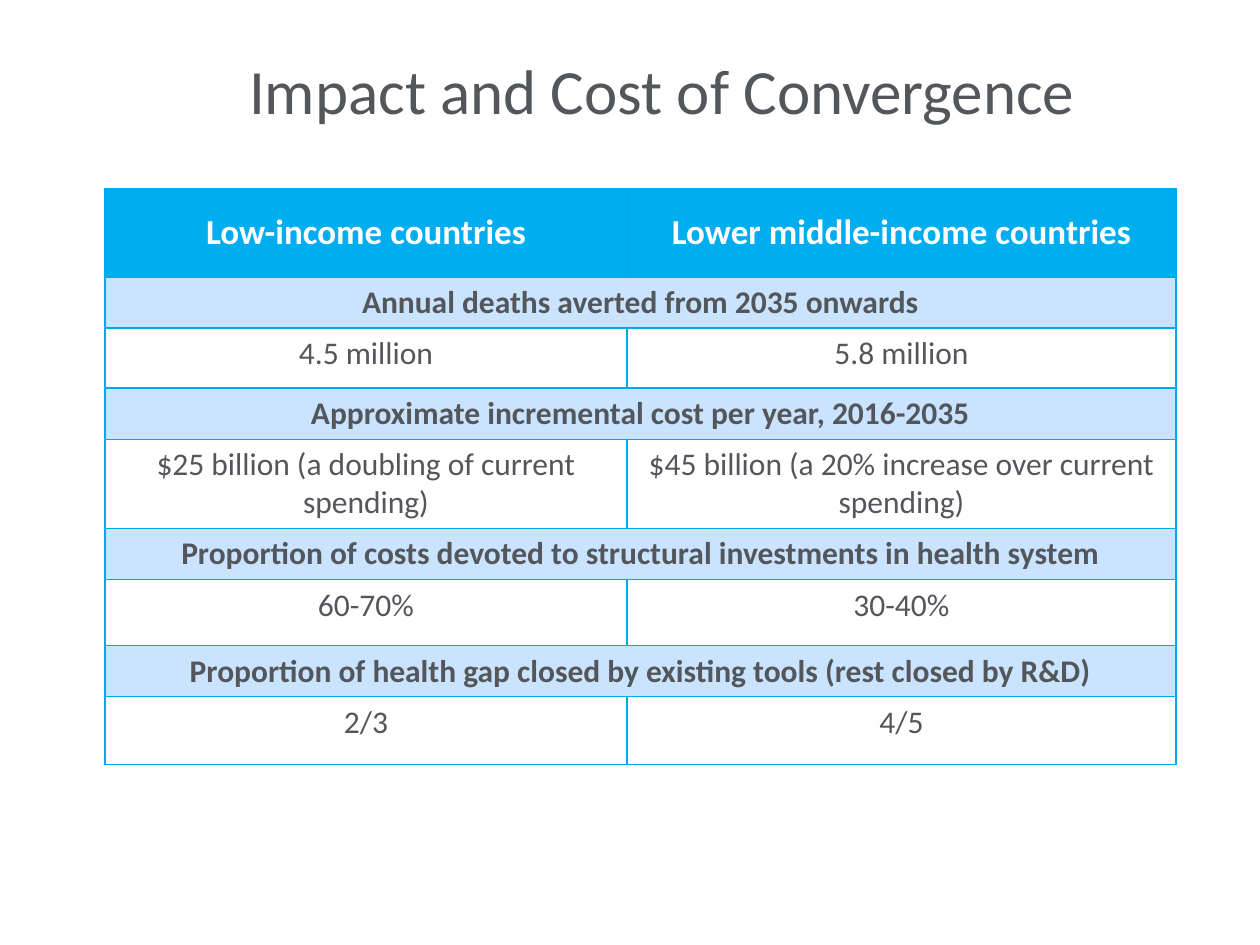
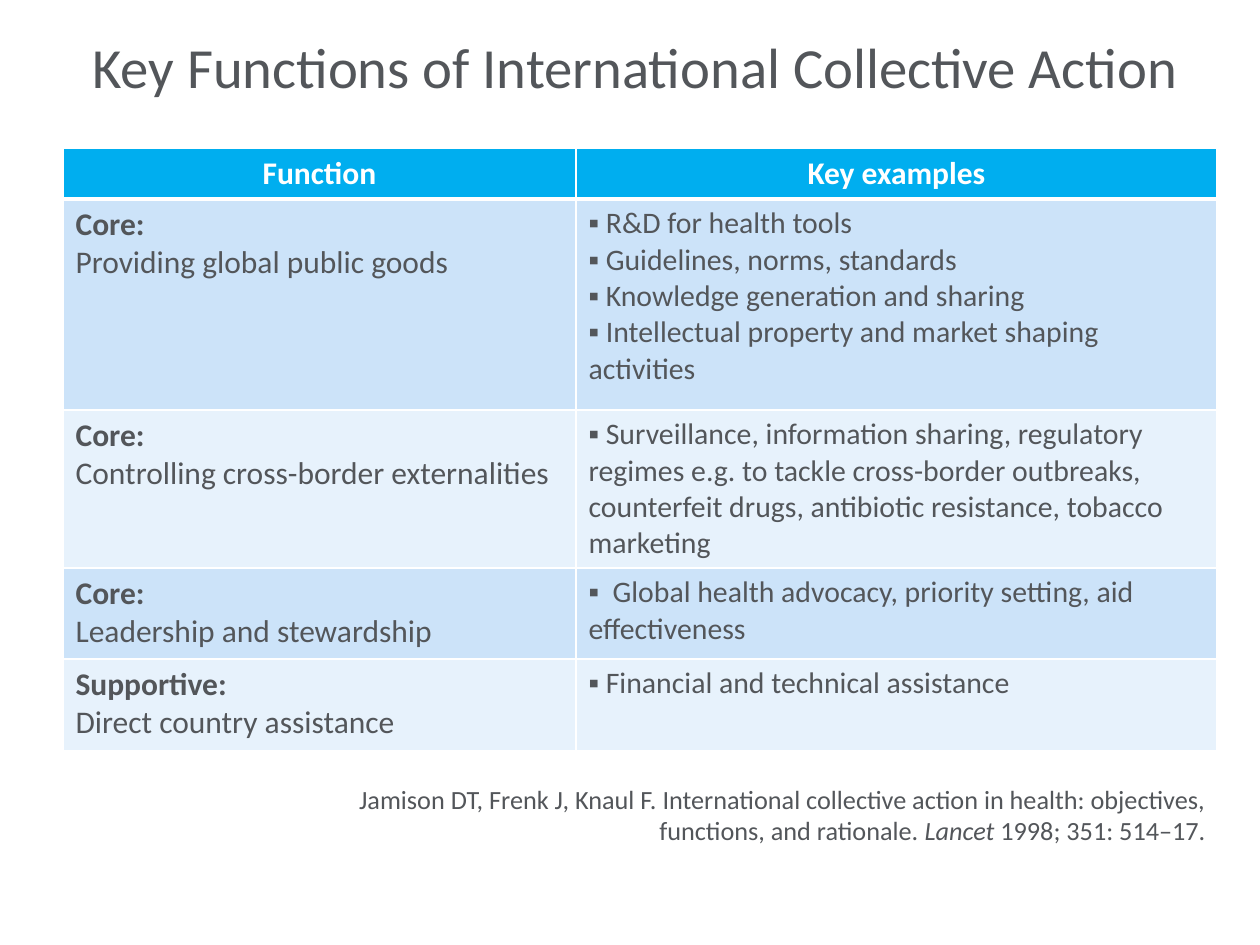
"""Build two slides on the impact and functions of global health convergence."""
from lxml.etree import SubElement
from pptx import Presentation
from pptx.dml.color import RGBColor
from pptx.enum.text import MSO_ANCHOR as ANCHOR, MSO_AUTO_SIZE as AUTO, PP_ALIGN as ALIGN
from pptx.oxml import parse_xml
from pptx.oxml.ns import nsdecls
from pptx.util import Emu, Pt

FONT = "Calibri"
GREY, WHITE, BLUE = "53565A", "FFFFFF", "00AEEF"
EDGE, SECTION = "00AAEA", "CAE4FF"
BANDS = ["CCE3F9", "E7F2FC"]
rgb = RGBColor.from_string


def px(n):
    return Emu(round(n * 914400 / 126))


def style_cell(cell, lines, fill, size=18, color=GREY, bold=False, align=ALIGN.CENTER,
               edge=WHITE, weights=(1, 1, 1, 1)):
    cell.fill.solid()
    cell.fill.fore_color.rgb = rgb(fill)
    tc_pr = cell._tc.get_or_add_tcPr()
    for i, (side, weight) in enumerate(zip("LRTB", weights)):
        tc_pr.insert(i, parse_xml(
            f'<a:ln{side} {nsdecls("a")} w="{Pt(weight)}"><a:solidFill>'
            f'<a:srgbClr val="{edge}"/></a:solidFill></a:ln{side}>'))
    tf = cell.text_frame
    tf.text = "\n".join(lines)
    for p in tf.paragraphs:
        p.alignment = align
        p.font.name, p.font.size, p.font.bold = FONT, Pt(size), bold
        p.font.color.rgb = rgb(color)


prs = Presentation()
prs.slide_width, prs.slide_height = px(1260), px(945)

layouts = [
    ("Impact and Cost of Convergence", 36, (95, 10, 1134, 158), 6,
     (105, 189), [522, 549], [88, 51, 60, 51, 89, 51, 66, 51, 68]),
    ("Key Functions of International Collective Action", 32.4, (63, 38, 1144, 120), 70,
     (63, 148), [513, 641], [51, 211, 158, 91, 92]),
]
slides, tables = [], []
for title, size, box, bottom, (left, top), widths, heights in layouts:
    s = prs.slides.add_slide(prs.slide_layouts[5])
    sp = s.shapes.title
    sp.left, sp.top, sp.width, sp.height = map(px, box)
    tf = sp.text_frame
    tf.text = title
    tf.word_wrap, tf.auto_size = True, AUTO.NONE
    tf.vertical_anchor = ANCHOR.MIDDLE
    tf.margin_bottom = px(bottom)
    p = tf.paragraphs[0]
    p.alignment = ALIGN.CENTER
    p.font.name, p.font.size = FONT, Pt(size)
    p.font.color.rgb = rgb(GREY)
    table = s.shapes.add_table(len(heights), len(widths), px(left), px(top),
                               px(sum(widths)), px(sum(heights))).table
    for col, width in zip(table.columns, widths):
        col.width = px(width)
    for row, height in zip(table.rows, heights):
        row.height = px(height)
    slides.append(s)
    tables.append(table)

impact, functions = tables
impact_rows = [
    ["Low-income countries", "Lower middle-income countries"],
    ["Annual deaths averted from 2035 onwards", ""],
    ["4.5 million", "5.8 million"],
    ["Approximate incremental cost per year, 2016-2035", ""],
    ["$25 billion (a doubling of current spending)",
     "$45 billion (a 20% increase over current spending)"],
    ["Proportion of costs devoted to structural investments in health system", ""],
    ["60-70%", "30-40%"],
    ["Proportion of health gap closed by existing tools (rest closed by R&D)", ""],
    ["2/3", "4/5"],
]
for r, texts in enumerate(impact_rows):
    header, section = r == 0, r % 2 == 1
    for c, text in enumerate(texts):
        cell = impact.cell(r, c)
        style_cell(cell, [text], BLUE if header else SECTION if section else WHITE,
                   size=20 if header else 18, color=WHITE if header else GREY,
                   bold=header or section, edge=EDGE, weights=(0.75,) * 4)
        if header:
            cell.vertical_anchor = ANCHOR.MIDDLE
    if section:
        impact.cell(r, 0).merge(impact.cell(r, 1))

function_rows = [
    ("Core:", "Providing global public goods",
     ["▪ R&D for health tools", "▪ Guidelines, norms, standards",
      "▪ Knowledge generation and sharing",
      "▪ Intellectual property and market shaping activities"]),
    ("Core:", "Controlling cross-border externalities",
     ["▪ Surveillance, information sharing, regulatory regimes e.g. to tackle cross-border "
      "outbreaks, counterfeit drugs, antibiotic resistance, tobacco marketing"]),
    ("Core:", "Leadership and stewardship",
     ["▪  Global health advocacy, priority setting, aid effectiveness"]),
    ("Supportive:", "Direct country assistance",
     ["▪ Financial and technical assistance"]),
]
for c, text in enumerate(["Function", "Key examples"]):
    style_cell(functions.cell(0, c), [text], BLUE, color=WHITE, bold=True,
               weights=(1, 1, 1, 3))
for r, (kind, name, examples) in enumerate(function_rows, 1):
    fill = BANDS[(r - 1) % 2]
    weights = (1, 1, 3 if r == 1 else 1, 1)
    label = functions.cell(r, 0)
    style_cell(label, [kind, name], fill, align=ALIGN.LEFT, weights=weights)
    label.text_frame.paragraphs[0].font.bold = True
    style_cell(functions.cell(r, 1), examples, fill, size=17, align=ALIGN.LEFT,
               weights=weights)

tf = slides[1].shapes.add_textbox(px(294), px(777), px(924), px(108)).text_frame
tf.word_wrap = True
p = tf.paragraphs[0]
p.alignment = ALIGN.RIGHT
p.font.name, p.font.size = FONT, Pt(15)
p.font.color.rgb = rgb(GREY)
citation = [
    ("Jamison DT, Frenk J, Knaul F. International collective action in health: "
     "objectives, functions, and rationale. ", False),
    ("Lancet ", True),
    ("1998; 351: 514–17.", False),
]
for text, italic in citation:
    run = p.add_run()
    run.text = text
    run.font.italic = italic

prs.save("out.pptx")
